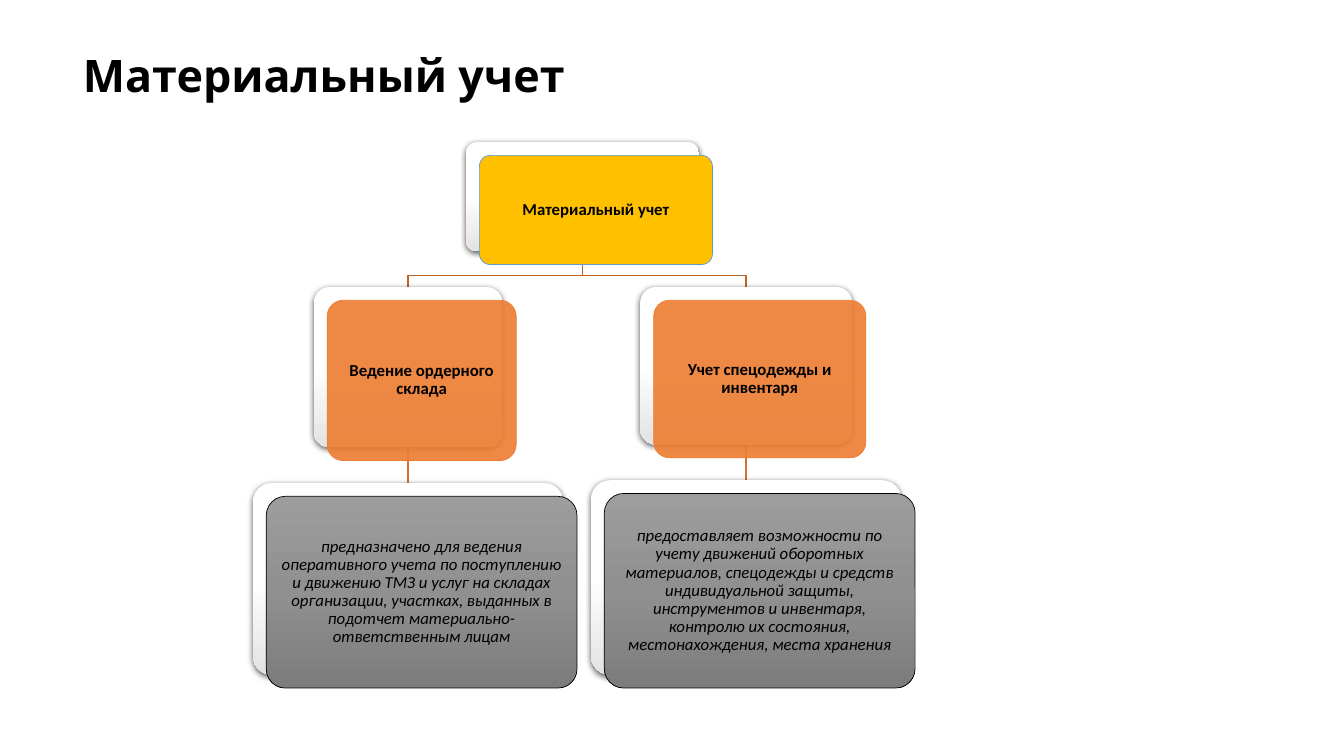
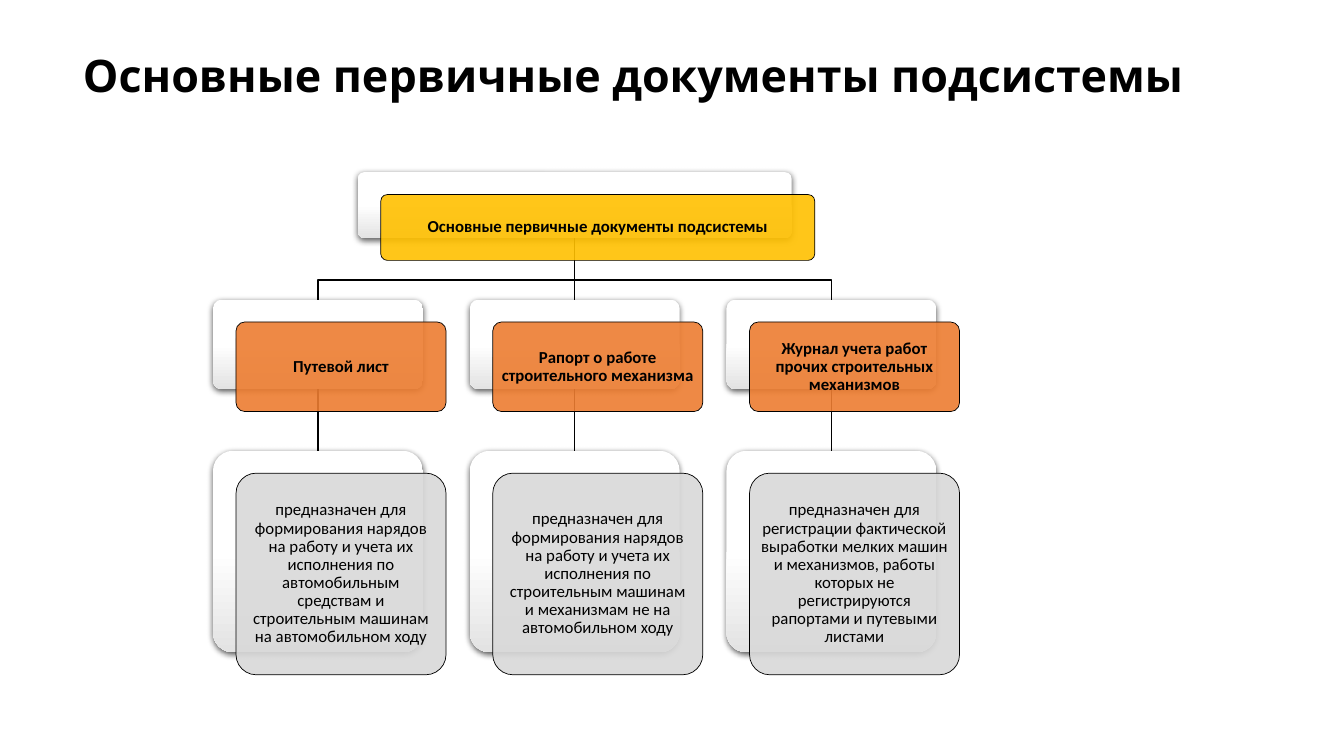
from copy import deepcopy
from dataclasses import dataclass

from lxml import etree
from pptx import Presentation
from pptx.dml.color import RGBColor
from pptx.enum import shapes, text
from pptx.oxml.ns import qn
from pptx.util import Pt

BLACK = RGBColor(0x00, 0x00, 0x00)
WHITE = RGBColor(0xFF, 0xFF, 0xFF)
SILVER = RGBColor(0xE3, 0xE3, 0xE3)
GOLD = RGBColor(0xFF, 0xC0, 0x00)
BLUE = RGBColor(0x5B, 0x9B, 0xD5)
ORANGE = RGBColor(0xED, 0x7D, 0x31)
RUST = RGBColor(0xBE, 0x64, 0x27)
COPPER = RGBColor(0xD7, 0x71, 0x2C)
LIGHT_GREY = RGBColor(0xD9, 0xD9, 0xD9)
PLATE_STOPS = (WHITE, WHITE, SILVER)
GREY_STOPS = (
    RGBColor(0x9D, 0x9D, 0x9D),
    RGBColor(0x90, 0x90, 0x90),
    RGBColor(0x7C, 0x7C, 0x7C),
)

TITLE_FONT = "Karla"
BODY_FONT = "Calibri"


@dataclass(frozen=True)
class Look:
    fill: RGBColor | tuple[RGBColor, ...]
    line: RGBColor = BLACK
    opacity: int = 100
    bold: bool = False
    italic: bool = False


@dataclass(frozen=True)
class Card:
    """A plate with a face in front of it; lengths in points, placed by its centre line."""
    label: str
    look: Look
    center: float
    top: float
    width: float
    height: float

    @property
    def left(self) -> float:
        return self.center - self.width / 2

    @property
    def bottom(self) -> float:
        return self.top + self.height


@dataclass(frozen=True)
class Tree:
    """A root card over branches, each of which is a card and the leaf below it."""
    title: str
    root: Card
    branches: list[tuple[Card, Card]]
    shift: tuple[float, float]
    elbow_color: RGBColor = BLACK
    straight_color: RGBColor = BLACK


def set_gradient(shape, colors: tuple[RGBColor, ...]) -> None:
    """Fill from top to bottom with three evenly spaced colours."""
    shape.fill.gradient()
    shape.fill.gradient_angle = 270
    stop_list = shape._element.spPr.find(".//" + qn("a:gsLst"))
    stop_list.insert(1, deepcopy(stop_list[0]))
    for index, (stop, color) in enumerate(zip(shape.fill.gradient_stops, colors)):
        stop.position = index / 2
        stop.color.rgb = color


def set_solid(shape, color: RGBColor, opacity: int) -> None:
    shape.fill.solid()
    shape.fill.fore_color.rgb = color
    if opacity < 100:
        tone = shape._element.spPr.find(qn("a:solidFill"))[0]
        etree.SubElement(tone, qn("a:alpha"), val=str(opacity * 1000))


def add_shadow(shape) -> None:
    effects = shape._element.spPr.find(qn("a:effectLst"))
    shadow = etree.SubElement(
        effects, qn("a:outerShdw"), blurRad=str(int(Pt(4.5))), dist=str(int(Pt(1.5))),
        dir="5400000", algn="ctr", rotWithShape="0")
    tone = etree.SubElement(shadow, qn("a:srgbClr"), val=str(BLACK))
    etree.SubElement(tone, qn("a:alpha"), val="63000")


def add_panel(page, card: Card, shift: tuple[float, float] = (0, 0)):
    across, down = shift
    panel = page.shapes.add_shape(
        shapes.MSO_SHAPE.ROUNDED_RECTANGLE,
        Pt(card.left + across), Pt(card.top + down), Pt(card.width), Pt(card.height))
    panel.adjustments[0] = 0.1
    panel.shadow.inherit = False
    return panel


def add_label(panel, card: Card) -> None:
    frame = panel.text_frame
    frame.word_wrap = True
    frame.vertical_anchor = text.MSO_ANCHOR.MIDDLE
    frame.margin_left = frame.margin_right = Pt(3.6)
    frame.margin_top = frame.margin_bottom = Pt(3.6)
    frame.text = card.label
    para = frame.paragraphs[0]
    para.alignment = text.PP_ALIGN.CENTER
    para.line_spacing = 0.9
    font = para.runs[0].font
    font.name, font.size = BODY_FONT, Pt(12)
    font.bold, font.italic = card.look.bold, card.look.italic
    font.color.rgb = BLACK


def add_card(page, card: Card, shift: tuple[float, float]) -> None:
    plate = add_panel(page, card)
    set_gradient(plate, PLATE_STOPS)
    plate.line.fill.background()
    add_shadow(plate)

    face = add_panel(page, card, shift)
    if isinstance(card.look.fill, RGBColor):
        set_solid(face, card.look.fill, card.look.opacity)
    else:
        set_gradient(face, card.look.fill)
    face.line.color.rgb = card.look.line
    face.line.width = Pt(0.5)
    add_label(face, card)


def add_link(page, upper: Card, lower: Card, tree: Tree) -> None:
    """Join two cards: straight when aligned, else bent halfway between face and plate."""
    if upper.center == lower.center:
        link = page.shapes.add_connector(
            shapes.MSO_CONNECTOR.STRAIGHT,
            Pt(upper.center), Pt(upper.bottom), Pt(lower.center), Pt(lower.top))
        etree.SubElement(link._element.spPr, qn("a:effectLst"))
        color = tree.straight_color
    else:
        bend = (upper.bottom + tree.shift[1] + lower.top) / 2
        corners = [(upper.center, bend), (lower.center, bend), (lower.center, lower.top)]
        outline = page.shapes.build_freeform(Pt(upper.center), Pt(upper.bottom))
        outline.add_line_segments([(Pt(x), Pt(y)) for x, y in corners], close=False)
        link = outline.convert_to_shape()
        link.fill.background()
        link.shadow.inherit = False
        color = tree.elbow_color
    link.line.color.rgb = color
    link.line.width = Pt(1)


def add_title(page, wording: str) -> None:
    title = page.shapes.title
    title.left, title.top, title.width, title.height = Pt(52), Pt(33), Pt(828), Pt(45.5)
    frame = title.text_frame
    frame.text = wording
    frame.word_wrap = True
    frame.auto_size = text.MSO_AUTO_SIZE.NONE
    frame.vertical_anchor = text.MSO_ANCHOR.MIDDLE
    para = frame.paragraphs[0]
    para.alignment = text.PP_ALIGN.LEFT
    para.line_spacing = 0.9
    font = para.runs[0].font
    font.name, font.size, font.bold = TITLE_FONT, Pt(32), True
    font.color.rgb = BLACK


def add_tree_page(deck, tree: Tree) -> None:
    page = deck.slides.add_slide(deck.slide_layouts.get_by_name("Title Only"))
    add_title(page, tree.title)
    cards = [tree.root]
    for branch, leaf in tree.branches:
        add_link(page, branch, leaf, tree)
        add_link(page, tree.root, branch, tree)
        cards += [branch, leaf]
    for card in cards:
        add_card(page, card, tree.shift)


def accounting_tree() -> Tree:
    root_look = Look(GOLD, BLUE, bold=True)
    branch_look = Look(ORANGE, ORANGE, 90, bold=True)
    leaf_look = Look(GREY_STOPS, italic=True)
    title = "Материальный учет"
    return Tree(
        title,
        Card(title, root_look, 416, 101.5, 166.5, 78),
        [
            (
                Card("Ведение ордерного склада", branch_look, 291.5, 205, 135, 114.5),
                Card("предназначено для ведения оперативного учета по поступлению и "
                     "движению ТМЗ и услуг на складах организации, участках, выданных в "
                     "подотчет материально-ответственным лицам",
                     leaf_look, 291.5, 345, 222, 137),
            ),
            (
                Card("Учет спецодежды и инвентаря", branch_look, 533, 205, 151.5, 112.5),
                Card("предоставляет возможности по учету движений оборотных материалов, "
                     "спецодежды и средств индивидуальной защиты, инструментов и "
                     "инвентаря, контролю их состояния, местонахождения, места хранения",
                     leaf_look, 533, 343, 222, 139),
            ),
        ],
        shift=(9.7, 9.5), elbow_color=RUST, straight_color=COPPER,
    )


def documents_tree() -> Tree:
    branch_look = Look(ORANGE, opacity=90, bold=True)
    leaf_look = Look(LIGHT_GREY, opacity=90)
    middle, pitch, width = 410.5, 183.4, 150
    documents = [
        ("Путевой лист",
         "предназначен для формирования нарядов на работу и учета их исполнения по "
         "автомобильным средствам и строительным машинам на автомобильном ходу"),
        ("Рапорт о работе строительного механизма",
         "предназначен для формирования нарядов на работу и учета их исполнения по "
         "строительным машинам и механизмам не на автомобильном ходу"),
        ("Журнал учета работ прочих строительных механизмов",
         "предназначен для регистрации фактической выработки мелких машин и "
         "механизмов, работы которых не регистрируются рапортами и путевыми листами"),
    ]
    branches = []
    for index, (name, purpose) in enumerate(documents):
        center = middle + (index - 1) * pitch
        branches.append((Card(name, branch_look, center, 214, width, 64),
                         Card(purpose, leaf_look, center, 322, width, 144)))
    title = "Основные первичные документы подсистемы"
    root = Card(title, Look(GOLD, opacity=90, bold=True), middle, 123, 310, 47)
    return Tree(title, root, branches, shift=(16.5, 16))


def main() -> None:
    deck = Presentation()
    deck.slide_width, deck.slide_height = Pt(960), Pt(540)
    for tree in (accounting_tree(), documents_tree()):
        add_tree_page(deck, tree)
    deck.save("out.pptx")


if __name__ == "__main__":
    main()
